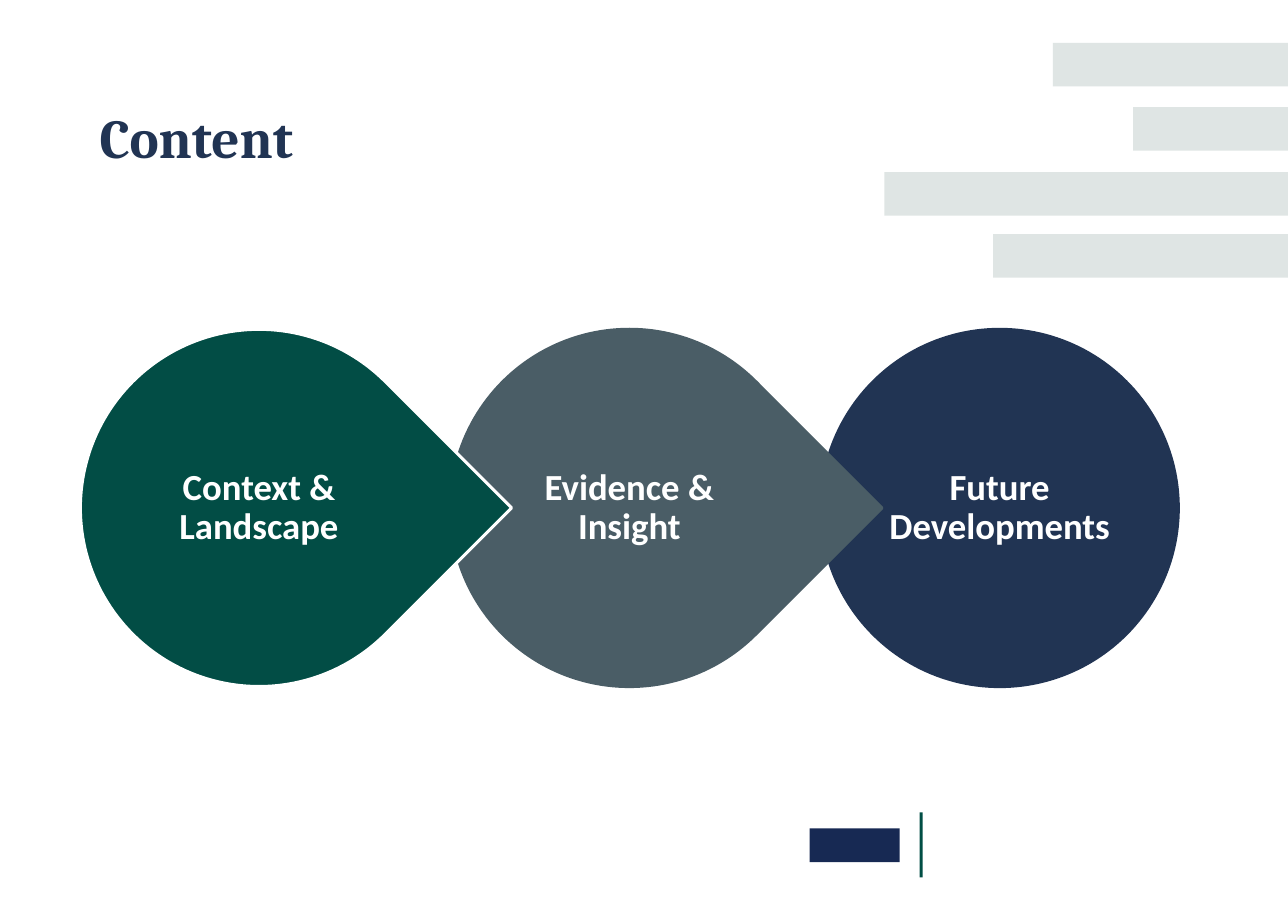
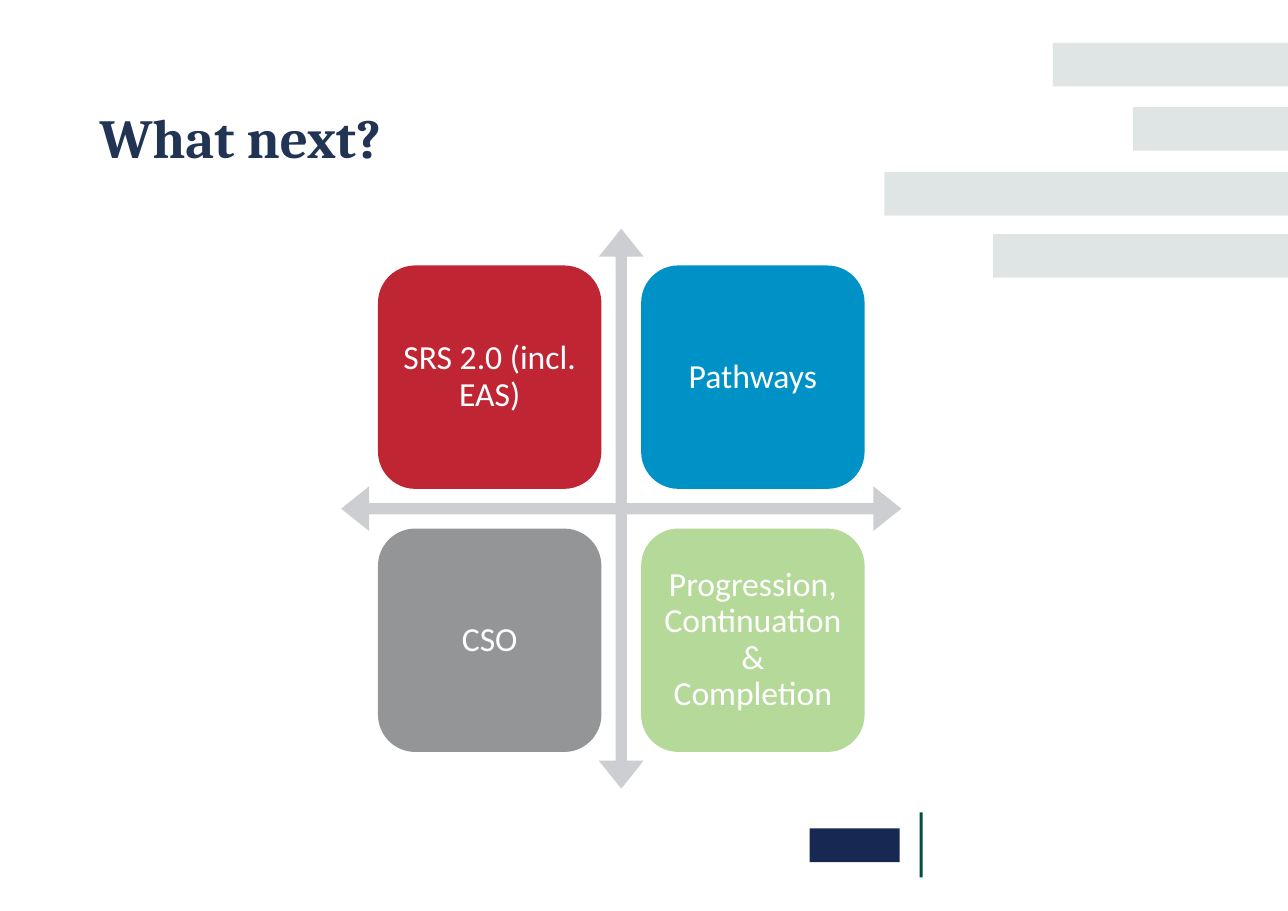
from pptx import Presentation
from pptx.dml.color import RGBColor
from pptx.enum.shapes import MSO_SHAPE
from pptx.enum.text import MSO_ANCHOR, PP_ALIGN
from pptx.util import Pt

# Content
STEPS = [
    ("Context & Landscape", "green", "white"),
    ("Evidence & Insight", "slate", "slate"),
    ("Future Developments", "navy", "navy"),
]
CARDS = [
    ("SRS 2.0 (incl. EAS)", "red"),
    ("Pathways", "blue"),
    ("CSO", "gray"),
    ("Progression, Continuation & Completion", "lime"),
]

# Theme
WIDE, HIGH = 841.68, 595.44
BARS = [(688, 28), (740.5, 70), (578, 112.5), (649, 153)]  # left, top
BAR_H = 28.5


class Theme:
    head, body = "Cambria", "Calibri"
    title, step, card = 36, 24, 22
    hues = dict(
        white="FFFFFF", navy="213453", green="024D45", slate="4A5D66",
        red="C02534", blue="0092C6", gray="939597", lime="B5D998",
        arrow="CDCED1", bar="DFE5E4", mark="172953", rule="014E45",
    )


def hue(name):
    return RGBColor.from_string(Theme.hues[name])


# Helpers
def draw(slide, kind, box, fill, line=None):
    shape = slide.shapes.add_shape(kind, *map(Pt, box))
    shape.shadow.inherit = False
    shape.fill.solid()
    shape.fill.fore_color.rgb = hue(fill)
    if line:
        shape.line.color.rgb = hue(line)
        shape.line.width = Pt(2)
    else:
        shape.line.fill.background()
    return shape


def write(shape, text, face, size, color, bold=False):
    frame = shape.text_frame
    frame.word_wrap = True
    para = frame.paragraphs[0]
    para.text = text
    font = para.font
    font.name, font.size, font.bold = face, Pt(size), bold
    font.color.rgb = hue(color)
    return frame


def label(shape, text, size, inset, bold=False):
    frame = write(shape, text, Theme.body, size, "white", bold)
    frame.vertical_anchor = MSO_ANCHOR.MIDDLE
    frame.margin_left = frame.margin_right = Pt(inset)
    frame.margin_top = frame.margin_bottom = Pt(inset)
    para = frame.paragraphs[0]
    para.alignment = PP_ALIGN.CENTER
    para.line_spacing = 0.9


def start(deck, title):
    slide = deck.slides.add_slide(deck.slide_layouts[6])
    for left, top in BARS:
        draw(slide, MSO_SHAPE.RECTANGLE, (left, top, WIDE - left, BAR_H), "bar")
    # Footer mark and rule
    draw(slide, MSO_SHAPE.RECTANGLE, (529, 541.5, 59, 22), "mark")
    draw(slide, MSO_SHAPE.RECTANGLE, (601, 531, 2, 42.5), "rule")
    box = slide.shapes.add_textbox(Pt(58), Pt(64), Pt(500), Pt(51))
    write(box, title, Theme.head, Theme.title, "navy", True)
    return slide


# Slide 1: chain of drops, the last one round
def chain(deck):
    slide = start(deck, "Content")
    left, top, size, pitch, text_w = 52.5, 215.25, 233.5, 242, 151
    last = len(STEPS) - 1
    for i in range(last, -1, -1):
        text, fill, line = STEPS[i]
        x = left + i * pitch
        kind = MSO_SHAPE.OVAL if i == last else MSO_SHAPE.TEAR
        drop = draw(slide, kind, (x, top, size, size), fill, line)
        drop.rotation = 0 if i == last else 45
        area = (x + (size - text_w) / 2, top, text_w, size)
        box = slide.shapes.add_textbox(*map(Pt, area))
        label(box, text, Theme.step, 0, True)


# Slide 2: four cards around a cross of arrows
def cross(deck):
    slide = start(deck, "What next?")
    mid_x, mid_y, span, size, gap = 406, 332.5, 366, 146, 26
    box = (mid_x - span / 2, mid_y - span / 2, span, span)
    arrow = draw(slide, MSO_SHAPE.QUAD_ARROW, box, "arrow")
    for i, part in enumerate((0.02, 0.04, 0.05)):
        arrow.adjustments[i] = part
    edge = size + gap / 2
    for i, (text, fill) in enumerate(CARDS):
        row, col = divmod(i, 2)
        x = mid_x - edge + col * (size + gap)
        y = mid_y - edge + row * (size + gap)
        card = draw(slide, MSO_SHAPE.ROUNDED_RECTANGLE, (x, y, size, size), fill)
        label(card, text, Theme.card, 6.5)


def main():
    deck = Presentation()
    deck.slide_width, deck.slide_height = Pt(WIDE), Pt(HIGH)
    chain(deck)
    cross(deck)
    deck.save("out.pptx")


if __name__ == "__main__":
    main()
